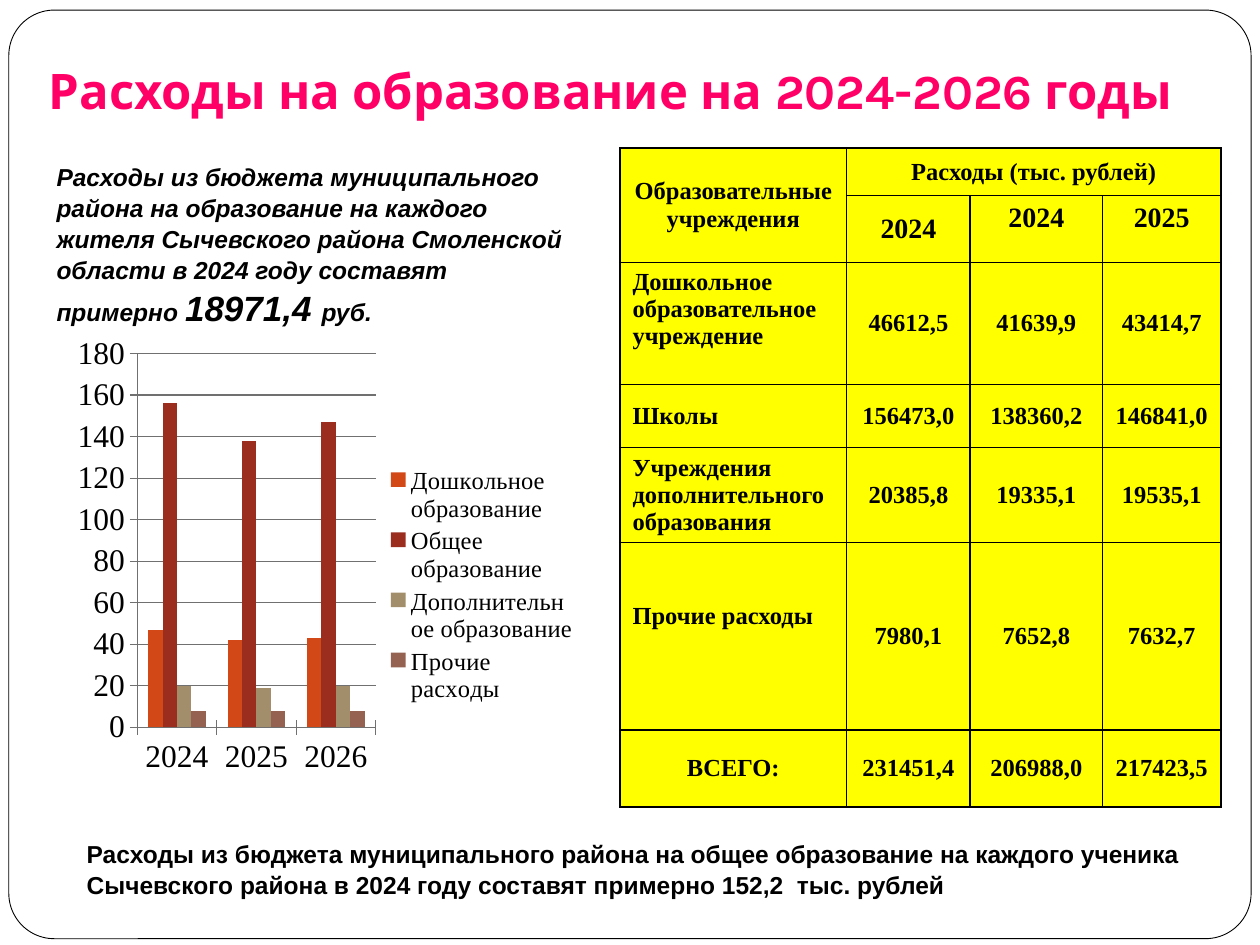
from typing import NamedTuple

from lxml.etree import SubElement
from pptx import Presentation
from pptx.chart.data import CategoryChartData
from pptx.dml.color import RGBColor
from pptx.enum.chart import XL_CHART_TYPE as ChartType, XL_LEGEND_POSITION as LegendPos
from pptx.enum.chart import XL_TICK_MARK as Tick
from pptx.enum.shapes import MSO_SHAPE as Preset
from pptx.enum.text import MSO_ANCHOR as Anchor, PP_ALIGN as Align
from pptx.oxml import parse_xml
from pptx.oxml.ns import nsdecls, qn
from pptx.util import Inches, Pt

BLACK = RGBColor(0x00, 0x00, 0x00)
WHITE = RGBColor(0xFF, 0xFF, 0xFF)
PINK = RGBColor(0xFF, 0x00, 0x66)
YELLOW = RGBColor(0xFF, 0xFF, 0x00)
GREY = RGBColor(0x70, 0x70, 0x70)
SERIF, SANS, HEADING = "Times New Roman", "Arial", "Karla"
PAGE_WIDTH, PAGE_HEIGHT = Inches(10), Inches(7.5)


class Area(NamedTuple):
    """A place on the page, in percent of its width and height."""
    left: float
    top: float
    width: float
    height: float

    def lengths(self) -> list[int]:
        sides = (PAGE_WIDTH, PAGE_HEIGHT) * 2
        return [int(side * share / 100) for side, share in zip(sides, self)]


class Series(NamedTuple):
    name: str
    values: tuple
    color: RGBColor


class Row(NamedTuple):
    height: float
    texts: tuple
    label_align: Align = Align.JUSTIFY
    label_anchor: Anchor = Anchor.MIDDLE
    label_top: float = 0.05


FRAME = Area(0.7, 1.07, 98.6, 98.27)
TITLE = Area(0, 3.73, 96.9, 10.27)
TABLE = Area(49.2, 15.65, 47.7, 69.73)
PER_PERSON = Area(3.5, 16.4, 42.5, 18.93)
PER_PUPIL = Area(5.9, 88.8, 90, 6.13)
CHART = Area(3.1, 34.4, 43.8, 55.07)

SERIES = (
    Series("Дошкольное образование", (47, 42, 43), RGBColor(0xD3, 0x48, 0x17)),
    Series("Общее образование", (156, 138, 147), RGBColor(0x9B, 0x2D, 0x1F)),
    Series("Дополнительное образование", (20, 19, 20), RGBColor(0xA2, 0x8E, 0x6A)),
    Series("Прочие расходы", (8, 8, 8), RGBColor(0x95, 0x62, 0x51)),
)
COLUMNS = (1.8, 0.98, 1.05, 0.94)
HEADER_HEIGHTS = (0.38, 0.53)
ROWS = (
    Row(0.97, ("Дошкольное образовательное учреждение", "46612,5", "41639,9", "43414,7"),
        label_anchor=Anchor.TOP),
    Row(0.5, ("Школы", "156473,0", "138360,2", "146841,0")),
    Row(0.75, ("Учреждения \nдополнительного\nобразования", "20385,8", "19335,1", "19535,1")),
    Row(1.49, ("Прочие расходы", "7980,1", "7652,8", "7632,7"),
        Align.LEFT, Anchor.TOP, 0.48),
    Row(0.61, ("ВСЕГО:", "231451,4", "206988,0", "217423,5"), Align.CENTER),
)


def add_text(para, text: str, *, size=14, font=SANS, color=BLACK, bold=True, italic=False):
    span = para.add_run()
    span.text = text
    span.font.size, span.font.name = Pt(size), font
    span.font.bold, span.font.italic = bold, italic
    span.font.color.rgb = color


def add_box(page, area: Area, spans: tuple, **style):
    """Add a text box of one paragraph; spans are pairs of text and size."""
    frame = page.shapes.add_textbox(*area.lengths()).text_frame
    frame.word_wrap, frame.vertical_anchor = True, Anchor.MIDDLE
    frame.paragraphs[0].line_spacing = 1.05
    for text, size in spans:
        add_text(frame.paragraphs[0], text, size=size, **style)


def add_frame(page):
    frame = page.shapes.add_shape(Preset.ROUNDED_RECTANGLE, *FRAME.lengths())
    frame.adjustments[0] = 0.049
    frame.shadow.inherit = False
    frame.fill.solid()
    frame.fill.fore_color.rgb = WHITE
    frame.line.color.rgb, frame.line.width = BLACK, Pt(0.5)


def place_title(page):
    title = page.shapes.title
    title.left, title.top, title.width, title.height = TITLE.lengths()
    page.shapes._spTree.append(title._element)  # in front of the frame
    frame = title.text_frame
    frame.word_wrap, frame.vertical_anchor = True, Anchor.BOTTOM
    frame.margin_bottom = Inches(0.1)
    para = frame.paragraphs[0]
    para.alignment = Align.CENTER
    add_text(para, "Расходы на образование на 2024-2026 годы",
             size=28, font=HEADING, color=PINK)


def add_borders(cell):
    properties = cell._tc.get_or_add_tcPr()
    for position, side in enumerate(("lnL", "lnR", "lnT", "lnB")):
        properties.insert(position, parse_xml(
            f'<a:{side} {nsdecls("a")} w="12700"><a:solidFill>'
            f'<a:srgbClr val="{BLACK}"/></a:solidFill></a:{side}>'))


def fill_cell(cell, text: str, *, align=Align.CENTER, anchor=Anchor.MIDDLE, size=14, top=0.05):
    cell.vertical_anchor, cell.margin_top = anchor, Inches(top)
    frame = cell.text_frame
    for number, line in enumerate(text.split("\n")):
        para = frame.add_paragraph() if number else frame.paragraphs[0]
        para.alignment = align
        add_text(para, line, size=size, font=SERIF)


def add_spending_table(page):
    heights = HEADER_HEIGHTS + tuple(row.height for row in ROWS)
    table = page.shapes.add_table(len(heights), len(COLUMNS), *TABLE.lengths()).table
    for column, width in zip(table.columns, COLUMNS):
        column.width = Inches(width)
    for row, height in zip(table.rows, heights):
        row.height = Inches(height)
    for cell in table.iter_cells():
        cell.fill.solid()
        cell.fill.fore_color.rgb = YELLOW
        add_borders(cell)

    # Header
    table.cell(0, 0).merge(table.cell(1, 0))
    table.cell(0, 1).merge(table.cell(0, 3))
    fill_cell(table.cell(0, 0), "Образовательные учреждения")
    fill_cell(table.cell(0, 1), "Расходы (тыс. рублей)")
    for column, year in enumerate(("2024", "2024", "2025"), 1):
        anchor = Anchor.MIDDLE if column == 1 else Anchor.TOP
        fill_cell(table.cell(1, column), year, size=16, anchor=anchor)

    # Body
    for number, row in enumerate(ROWS, len(HEADER_HEIGHTS)):
        label, *amounts = row.texts
        fill_cell(table.cell(number, 0), label, align=row.label_align,
                  anchor=row.label_anchor, top=row.label_top)
        for column, amount in enumerate(amounts, 1):
            fill_cell(table.cell(number, column), amount)


def set_plot_layout(chart, **shares: float):
    plot_area = chart._chartSpace.chart.plotArea
    for old in plot_area.findall(qn("c:layout")):
        plot_area.remove(old)
    layout = parse_xml(f'<c:layout {nsdecls("c")}><c:manualLayout/></c:layout>')
    settings = dict(layoutTarget="inner", xMode="edge", yMode="edge", **shares)
    for name, value in settings.items():
        SubElement(layout[0], qn(f"c:{name}")).set("val", str(value))
    plot_area.insert(0, layout)


def add_spending_chart(page):
    data = CategoryChartData()
    data.categories = ("2024", "2025", "2026")
    for series in SERIES:
        data.add_series(series.name, series.values)
    chart = page.shapes.add_chart(ChartType.COLUMN_CLUSTERED, *CHART.lengths(), data).chart
    chart.has_title = False
    chart.font.name, chart.font.size, chart.font.color.rgb = SERIF, Pt(18), BLACK
    set_plot_layout(chart, x=0.178, y=0.055, w=0.432, h=0.718)

    plot = chart.plots[0]
    plot.vary_by_categories, plot.gap_width, plot.overlap = False, 150, 0
    for drawn, series in zip(plot.series, SERIES):
        drawn.format.fill.solid()
        drawn.format.fill.fore_color.rgb = series.color

    # Axes and legend
    values = chart.value_axis
    values.minimum_scale, values.maximum_scale, values.major_unit = 0, 180, 20
    values.has_major_gridlines = True
    for axis in (chart.category_axis, values):
        axis.major_tick_mark = Tick.CROSS
        axis.format.line.color.rgb = GREY
    values.major_gridlines.format.line.color.rgb = GREY
    chart.has_legend = True
    chart.legend.position, chart.legend.include_in_layout = LegendPos.RIGHT, False
    chart.legend.font.size, chart.legend.font.name = Pt(14), SERIF
    chart.legend.font.color.rgb = BLACK


def main():
    deck = Presentation()
    deck.slide_width, deck.slide_height = PAGE_WIDTH, PAGE_HEIGHT
    page = deck.slides.add_slide(deck.slide_layouts[5])
    add_frame(page)
    place_title(page)
    add_spending_table(page)
    add_box(page, PER_PERSON, (
        ("Расходы из бюджета муниципального района на образование на каждого жителя "
         "Сычевского района Смоленской области в 2024 году составят примерно ", 14),
        ("18971,4 ", 20), ("руб.", 14)), italic=True)
    add_box(page, PER_PUPIL, (
        ("Расходы из бюджета муниципального района на общее образование на каждого ученика "
         "Сычевского района в 2024 году составят примерно 152,2  тыс. рублей", 14),))
    add_spending_chart(page)
    deck.save("out.pptx")


if __name__ == "__main__":
    main()
